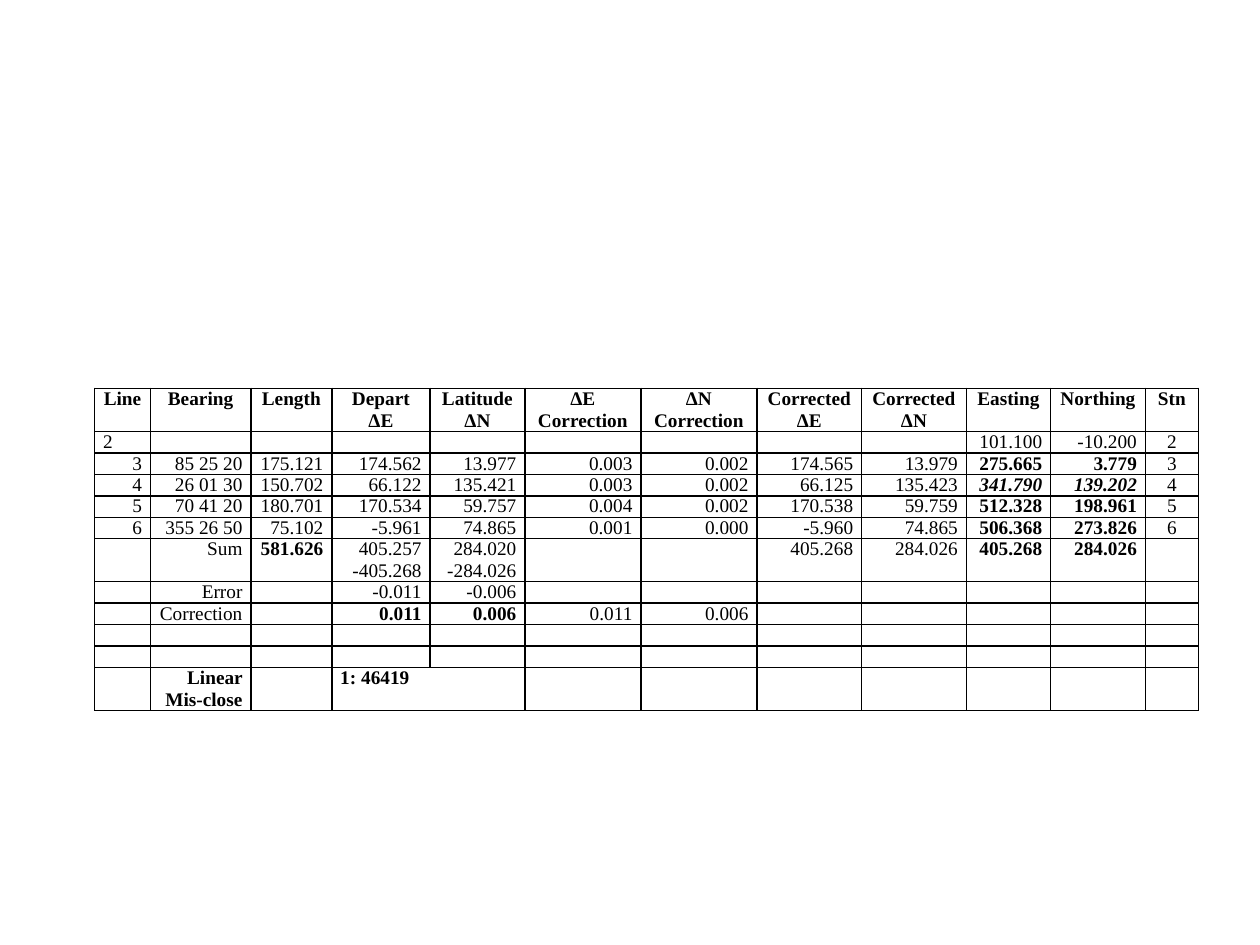
import pptx
import pptx.dml.color
import pptx.enum.text
import pptx.oxml
import pptx.oxml.ns
import pptx.util
from lxml import etree

Cm = pptx.util.Cm
Pt = pptx.util.Pt
ALIGN = pptx.enum.text.PP_ALIGN
FONT = "Times New Roman"
FONT_SIZE = 11
INK = "000000"


def color(hex_string):
    return pptx.dml.color.RGBColor.from_string(hex_string)


def add_borders(cell):
    properties = cell._tc.get_or_add_tcPr()
    for side in ("lnL", "lnR", "lnT", "lnB"):
        properties.append(pptx.oxml.parse_xml(
            f'<a:{side} {pptx.oxml.ns.nsdecls("a")} w="12700"><a:solidFill>'
            f'<a:srgbClr val="{INK}"/></a:solidFill></a:{side}>'))


column_widths = [1.12, 2.03, 1.63, 1.98, 1.91, 2.34, 2.34, 2.11, 2.11, 1.7, 1.91, 1.07]
line_height = 0.43
EASTING, NORTHING, STATION = 9, 10, 11
empty = [""] * len(column_widths)

traverse = [
    ["Line", "Bearing", "Length", "Depart\nΔE", "Latitude\nΔN", "ΔE\nCorrection",
     "ΔN\nCorrection", "Corrected\nΔE", "Corrected\nΔN", "Easting", "Northing", "Stn"],
    ["2"] + [""] * 8 + ["101.100", "-10.200", "2"],
    ["3", "85 25 20", "175.121", "174.562", "13.977", "0.003", "0.002",
     "174.565", "13.979", "275.665", "3.779", "3"],
    ["4", "26 01 30", "150.702", "66.122", "135.421", "0.003", "0.002",
     "66.125", "135.423", "341.790", "139.202", "4"],
    ["5", "70 41 20", "180.701", "170.534", "59.757", "0.004", "0.002",
     "170.538", "59.759", "512.328", "198.961", "5"],
    ["6", "355 26 50", "75.102", "-5.961", "74.865", "0.001", "0.000",
     "-5.960", "74.865", "506.368", "273.826", "6"],
    ["", "Sum", "581.626", "405.257\n-405.268", "284.020\n-284.026", "", "",
     "405.268", "284.026", "405.268", "284.026", ""],
    ["", "Error", "", "-0.011", "-0.006"] + [""] * 7,
    ["", "Correction", "", "0.011", "0.006", "0.011", "0.006"] + [""] * 5,
    empty,
    empty,
    ["", "Linear Mis-close", "", "1: 46419"] + [""] * 8,
]
HEADER, START, SUM, CORRECTION, MISCLOSE = 0, 1, 6, 8, 11
two_line_rows = {HEADER, SUM, MISCLOSE}
bold_cells = {(SUM, 2), (CORRECTION, 3), (CORRECTION, 4)}
italic_cells = {(3, EASTING), (3, NORTHING)}
left_cells = {(START, 0), (MISCLOSE, 3)}

presentation = pptx.Presentation()
presentation.slide_width = Cm(25.4)
presentation.slide_height = Cm(19.05)
slide = presentation.slides.add_slide(presentation.slide_layouts[6])

row_heights = [line_height * (2 if r in two_line_rows else 1) for r in range(len(traverse))]
table = slide.shapes.add_table(
    len(traverse), len(column_widths), Cm(1.91), Cm(7.83),
    Cm(sum(column_widths)), Cm(sum(row_heights))).table
table.first_row = False
table.horz_banding = False
for column, width in zip(table.columns, column_widths):
    column.width = Cm(width)
for row, height in zip(table.rows, row_heights):
    row.height = Cm(height)
table.cell(MISCLOSE, 3).merge(table.cell(MISCLOSE, 4))

for r, values in enumerate(traverse):
    for c, value in enumerate(values):
        cell = table.cell(r, c)
        cell.margin_left = cell.margin_right = Cm(0.17)
        cell.margin_top = cell.margin_bottom = 0
        add_borders(cell)
        cell.fill.background()
        cell.text_frame.text = value

        if (r, c) in left_cells:
            alignment = ALIGN.LEFT
        elif r == HEADER or c == STATION:
            alignment = ALIGN.CENTER
        else:
            alignment = ALIGN.RIGHT
        coordinate = c in (EASTING, NORTHING) and r > START
        bold = r in (HEADER, MISCLOSE) or coordinate or (r, c) in bold_cells

        for paragraph in cell.text_frame.paragraphs:
            paragraph.alignment = alignment
            for run in paragraph.runs:
                run.font.name = FONT
                run.font.size = Pt(FONT_SIZE)
                run.font.bold = bold
                run.font.italic = (r, c) in italic_cells
                run.font.color.rgb = color(INK)
            if not value:
                # An empty cell needs its text size here to keep the row low.
                end = etree.SubElement(paragraph._p, pptx.oxml.ns.qn("a:endParaRPr"),
                                       sz=str(FONT_SIZE * 100))
                etree.SubElement(end, pptx.oxml.ns.qn("a:latin"), typeface=FONT)

presentation.save("out.pptx")
